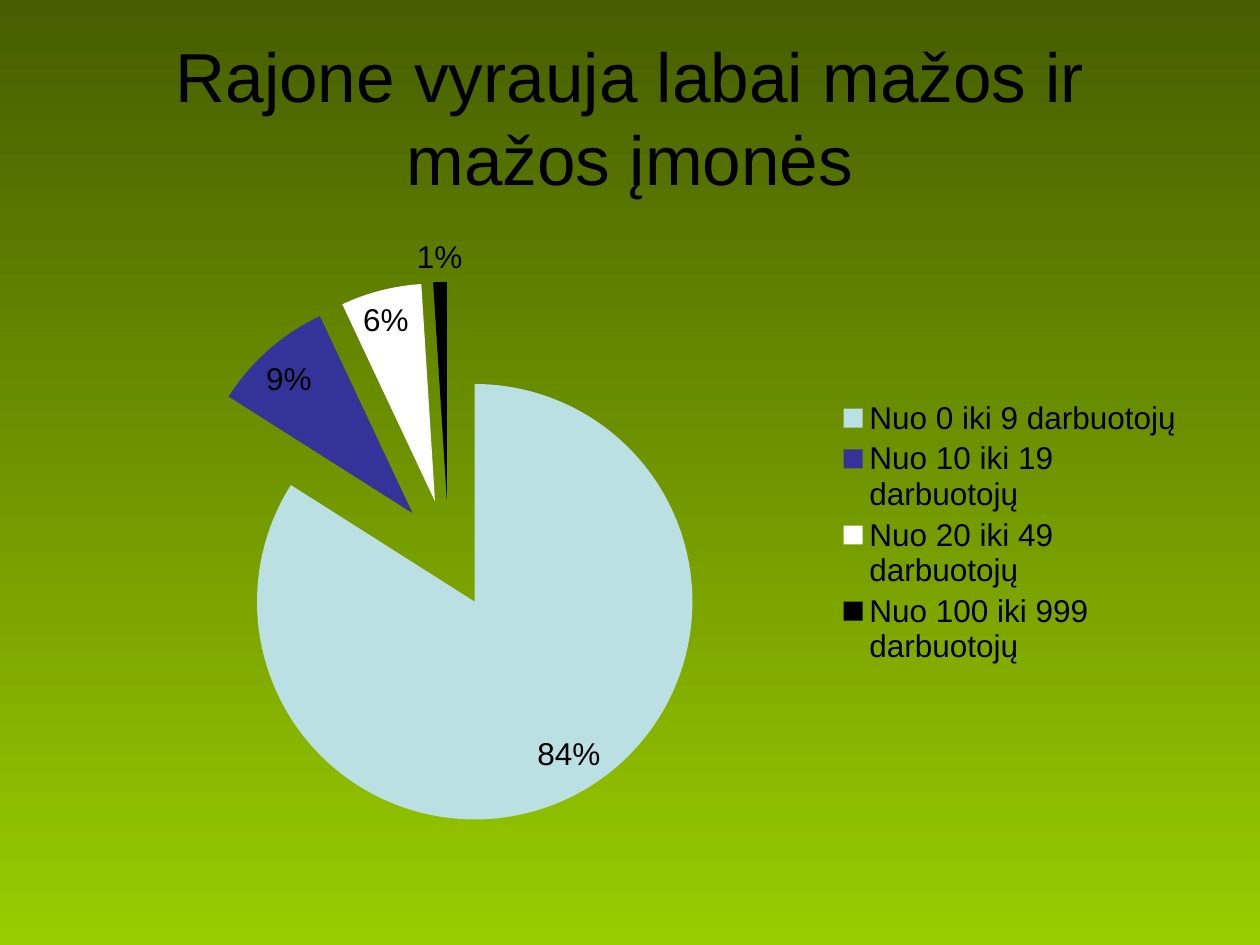
from dataclasses import dataclass

from lxml import etree
from pptx import Presentation
from pptx.chart.data import CategoryChartData
from pptx.dml.color import RGBColor
from pptx.enum.chart import XL_CHART_TYPE, XL_LABEL_POSITION, XL_LEGEND_POSITION
from pptx.enum.text import MSO_ANCHOR, MSO_AUTO_SIZE, PP_ALIGN
from pptx.oxml.ns import qn
from pptx.util import Inches, Pt

PIE = XL_CHART_TYPE.PIE
BEST_FIT = XL_LABEL_POSITION.BEST_FIT
LEGEND_RIGHT = XL_LEGEND_POSITION.RIGHT
CENTER = PP_ALIGN.CENTER
MIDDLE = MSO_ANCHOR.MIDDLE
NO_AUTOFIT = MSO_AUTO_SIZE.NONE
TITLE_ONLY = 5


@dataclass(frozen=True)
class Theme:
    font: str = "Arial"
    title_size: float = 39.6
    chart_size: float = 18
    text: str = "000000"
    background: tuple = ("465E00", "99CC00")


THEME = Theme()
TITLE = "Rajone vyrauja labai mažos ir mažos įmonės"
COMPANY_SIZES = [
    ("Nuo 0 iki 9 darbuotojų", 84, "BBE0E3"),
    ("Nuo 10 iki 19 darbuotojų", 9, "333399"),
    ("Nuo 20 iki 49 darbuotojų", 6, "FFFFFF"),
    ("Nuo 100 iki 999 darbuotojų", 1, "000000"),
]
EXPLOSION = 25
PLOT_LAYOUT = {"x": 0.1, "y": 0.09, "w": 0.48, "h": 0.89}
LEGEND_LAYOUT = {"x": 0.68, "y": 0.28, "w": 0.31, "h": 0.44}


def rgb(value):
    return RGBColor.from_string(value)


def set_font(font, size):
    for name, value in {"name": THEME.font, "size": Pt(size), "bold": False}.items():
        setattr(font, name, value)
    font.color.rgb = rgb(THEME.text)


def paint_background(page):
    fill = page.background.fill
    fill.gradient()
    fill.gradient_angle = 270
    for stop, color, position in zip(fill.gradient_stops, THEME.background, (0, 1)):
        stop.color.rgb = rgb(color)
        stop.position = position


def add_title(page, text):
    title = page.shapes.title
    bounds = {"left": 0.5, "top": 0.3, "width": 9, "height": 1.25}
    for name, value in bounds.items():
        setattr(title, name, Inches(value))
    frame = title.text_frame
    settings = {"text": text, "word_wrap": True, "auto_size": NO_AUTOFIT,
                "vertical_anchor": MIDDLE}
    for name, value in settings.items():
        setattr(frame, name, value)
    para = frame.paragraphs[0]
    para.alignment = CENTER
    set_font(para.runs[0].font, THEME.title_size)


def fill_layout(layout, position, inner=False):
    """Place a chart part by fractions of the chart's width and height."""
    manual = etree.SubElement(layout, qn("c:manualLayout"))
    values = {"layoutTarget": "inner"} if inner else {}
    values.update({"xMode": "edge", "yMode": "edge"}, **position)
    for name, value in values.items():
        etree.SubElement(manual, qn(f"c:{name}")).set("val", str(value))


def get_layout(parent, before):
    """Return an empty layout element that stands ahead of the first `before` child."""
    for old in parent.findall(qn("c:layout")):
        parent.remove(old)
    layout = etree.Element(qn("c:layout"))
    parent.find(qn(before)).addprevious(layout)
    return layout


def format_slices(series):
    for index, (_, _, color) in enumerate(COMPANY_SIZES):
        fill = series.points[index].format.fill
        fill.solid()
        fill.fore_color.rgb = rgb(color)
    explosion = etree.Element(qn("c:explosion"))
    explosion.set("val", str(EXPLOSION))
    series._element.find(qn("c:dPt")).addprevious(explosion)


def format_labels(plot):
    plot.has_data_labels = True
    labels = plot.data_labels
    settings = {"show_percentage": True, "show_value": False, "number_format": "0%",
                "number_format_is_linked": False, "position": BEST_FIT}
    for name, value in settings.items():
        setattr(labels, name, value)
    set_font(labels.font, THEME.chart_size)


def format_legend(chart):
    chart.has_legend = True
    legend = chart.legend
    legend.position = LEGEND_RIGHT
    legend.include_in_layout = False
    set_font(legend.font, THEME.chart_size)
    fill_layout(get_layout(legend._element, "c:overlay"), LEGEND_LAYOUT)


def add_pie(page):
    data = CategoryChartData(number_format="0")
    data.categories = [name for name, _, _ in COMPANY_SIZES]
    data.add_series("Series 1", [share for _, share, _ in COMPANY_SIZES])
    chart = page.shapes.add_chart(
        PIE, Inches(0.5), Inches(1.75), Inches(9), Inches(4.95), data).chart
    chart.has_title = False
    set_font(chart.font, THEME.chart_size)
    plot = chart.plots[0]
    plot.vary_by_categories = True
    format_slices(plot.series[0])
    format_labels(plot)
    format_legend(chart)
    plot_area = plot._element.getparent()
    fill_layout(get_layout(plot_area, "c:pieChart"), PLOT_LAYOUT, inner=True)


def main():
    deck = Presentation()
    deck.slide_width, deck.slide_height = Inches(10), Inches(7.5)
    page = deck.slides.add_slide(deck.slide_layouts[TITLE_ONLY])
    paint_background(page)
    add_title(page, TITLE)
    add_pie(page)
    deck.save("out.pptx")


if __name__ == "__main__":
    main()
